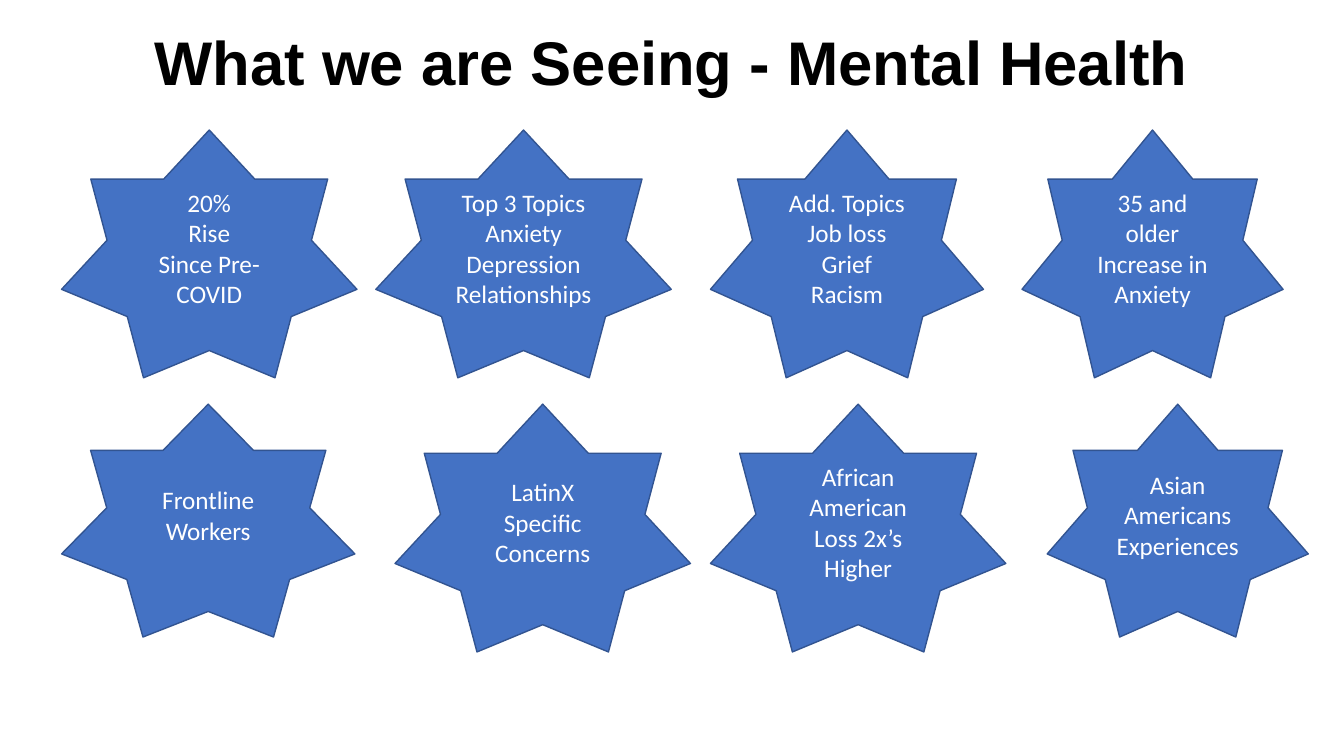
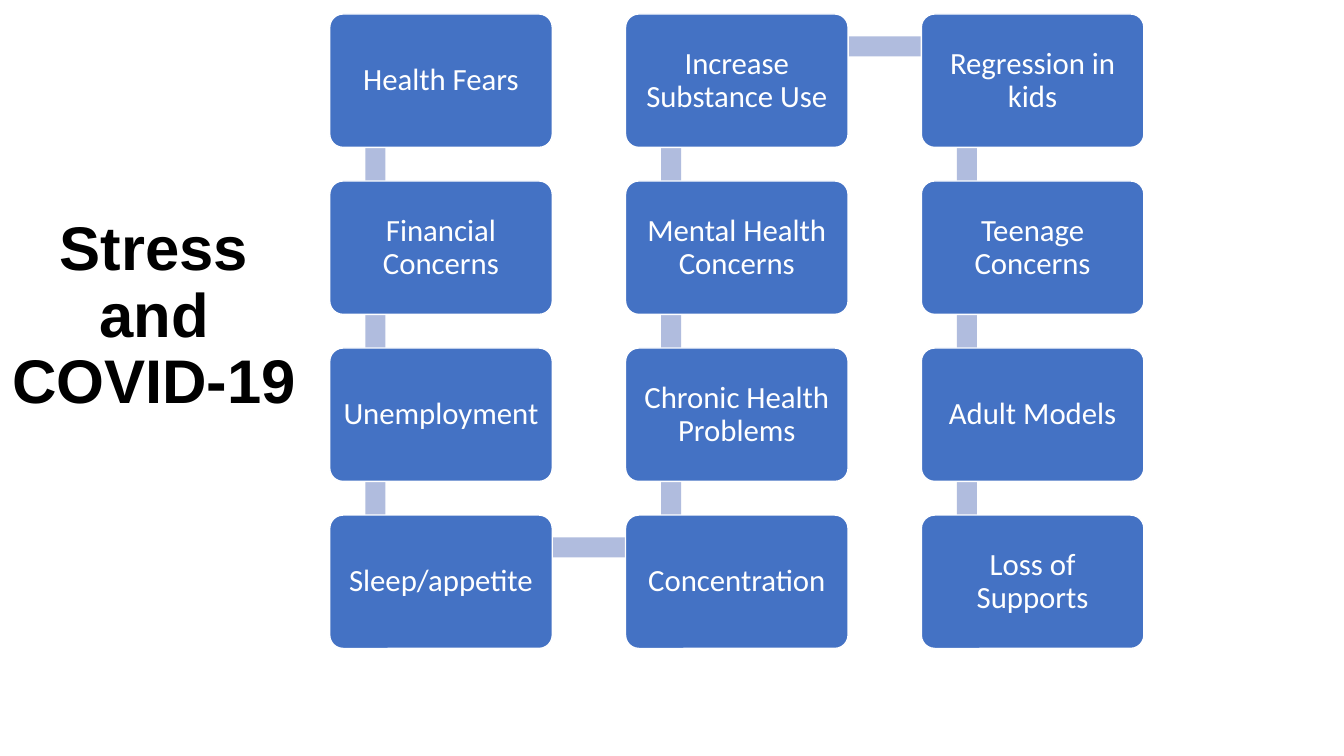
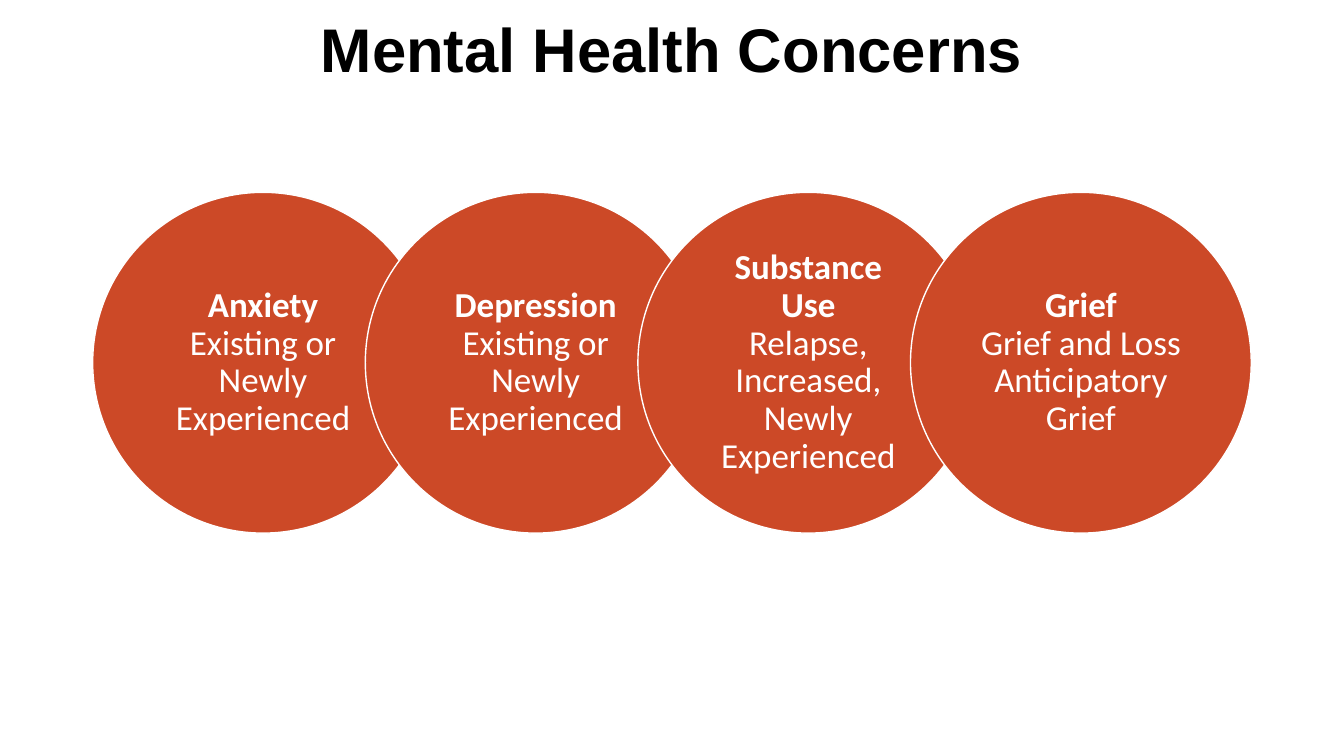
from pptx import Presentation
from pptx.dml.color import RGBColor
from pptx.enum import shapes, text
from pptx.util import Pt

BLACK = RGBColor(0x00, 0x00, 0x00)
WHITE = RGBColor(0xFF, 0xFF, 0xFF)
BLUE = RGBColor(0x44, 0x72, 0xC4)
DARK_BLUE = RGBColor(0x32, 0x54, 0x91)
PALE_BLUE = RGBColor(0xB0, 0xBC, 0xDE)
RUST = RGBColor(0xCC, 0x49, 0x27)

TITLE_FONT = "Arial"
BODY_FONT = "Calibri"
PAGE_WIDTH, PAGE_HEIGHT = 960, 540
TITLE_ONLY = 5

# Left, width, height and lines of each star, by the top of its row
STAR_ROWS = {
    92.9: [
        (44, 211, 177, ["20%", "Rise", "Since Pre-COVID"]),
        (268.5, 211, 177, ["Top 3 Topics", "Anxiety", "Depression", "Relationships"]),
        (507.5, 195, 177, ["Add. Topics", "Job loss", "Grief", "Racism"]),
        (730, 186.5, 177, ["35 and older", "Increase in Anxiety"]),
    ],
    288.7: [
        (44, 209.5, 166.3, ["Frontline Workers"]),
        (282.2, 211, 177, ["LatinX Specific Concerns"]),
        (507.5, 211, 177, ["African American Loss 2x’s Higher"]),
        (748, 186.5, 166.3, ["Asian", "Americans Experiences"]),
    ],
}

STRESSORS = [
    "Health Fears", "Financial Concerns", "Unemployment", "Sleep/appetite",
    "Concentration", "Chronic Health Problems", "Mental Health Concerns",
    "Increase Substance Use",
    "Regression in kids", "Teenage Concerns", "Adult Models", "Loss of Supports",
]
CARD_ROWS = 4
CARD_LEFT, CARD_TOP = 235.5, 10
CARD_WIDTH, CARD_HEIGHT = 159, 95.3
COLUMN_STEP, ROW_STEP = 211.3, 119.3
BAR_THICKNESS = 14.3

CONCERNS = [
    ["Anxiety", "Existing or Newly Experienced"],
    ["Depression", "Existing or Newly Experienced"],
    ["Substance Use", "Relapse, Increased, Newly Experienced"],
    ["Grief", "Grief and Loss", "Anticipatory Grief"],
]
CIRCLE_LEFT, CIRCLE_TOP, CIRCLE_SIZE = 66.2, 137.4, 243.4
CIRCLE_STEP = CIRCLE_SIZE * 0.8


def add_page(deck, title, width, height):
    """Add a slide whose centred title fills a box at the top left corner."""
    page = deck.slides.add_slide(deck.slide_layouts[TITLE_ONLY])
    box = page.shapes.title
    box.left, box.top, box.width, box.height = 0, 0, Pt(width), Pt(height)
    frame = box.text_frame
    frame.text = title
    frame.word_wrap = True
    frame.auto_size = text.MSO_AUTO_SIZE.NONE
    frame.vertical_anchor = text.MSO_ANCHOR.MIDDLE
    para = frame.paragraphs[0]
    para.alignment = text.PP_ALIGN.CENTER
    para.line_spacing = 0.9
    font = para.runs[0].font
    font.name, font.size, font.bold = TITLE_FONT, Pt(44), True
    font.color.rgb = BLACK
    return page


def add_figure(page, kind, left, top, width, height, fill, line=None):
    """Add a flat preset shape, outlined only when a line colour is given."""
    figure = page.shapes.add_shape(kind, Pt(left), Pt(top), Pt(width), Pt(height))
    figure.shadow.inherit = False
    figure.fill.solid()
    figure.fill.fore_color.rgb = fill
    if line is None:
        figure.line.fill.background()
    else:
        figure.line.color.rgb = line
        figure.line.width = Pt(1)
    return figure


def write_lines(figure, lines, size, spacing=1.0, insets=(7.2, 3.6), bold_first=False):
    """Centre the lines in a figure; insets are the side and the top margins."""
    frame = figure.text_frame
    frame.word_wrap = True
    frame.vertical_anchor = text.MSO_ANCHOR.MIDDLE
    frame.margin_left = frame.margin_right = Pt(insets[0])
    frame.margin_top = frame.margin_bottom = Pt(insets[1])
    frame.text = "\n".join(lines)
    for index, para in enumerate(frame.paragraphs):
        para.alignment = text.PP_ALIGN.CENTER
        para.line_spacing = spacing
        for span in para.runs:
            span.font.name, span.font.size = BODY_FONT, Pt(size)
            span.font.color.rgb = WHITE
            span.font.bold = bold_first and index == 0


def card_corner(index):
    """Left and top of a card on the path that runs down, up and down again."""
    column, row = divmod(index, CARD_ROWS)
    if column % 2:
        row = CARD_ROWS - 1 - row
    return CARD_LEFT + column * COLUMN_STEP, CARD_TOP + row * ROW_STEP


def add_bar(page, start, end):
    """Link two neighbouring cards, given by their corners."""
    left, top = min(start, end)
    if start[0] == end[0]:
        place = left + 25.5, top + 23.5, BAR_THICKNESS, ROW_STEP
    else:
        place = left + 32.5, top + 16, COLUMN_STEP, BAR_THICKNESS
    add_figure(page, shapes.MSO_SHAPE.RECTANGLE, *place, PALE_BLUE)


def add_stars(page):
    for top, stars in STAR_ROWS.items():
        for left, width, height, lines in stars:
            star = add_figure(page, shapes.MSO_SHAPE.STAR_7_POINT,
                              left, top, width, height, BLUE, DARK_BLUE)
            write_lines(star, lines, 18)


def add_stress_path(page):
    corners = [card_corner(index) for index in range(len(STRESSORS))]
    for start, end in zip(corners, corners[1:]):
        add_bar(page, start, end)
    for (left, top), stressor in zip(corners, STRESSORS):
        card = add_figure(page, shapes.MSO_SHAPE.ROUNDED_RECTANGLE,
                          left, top, CARD_WIDTH, CARD_HEIGHT, BLUE, WHITE)
        card.adjustments[0] = 0.1
        write_lines(card, [stressor], 22, 0.9, (6, 6))


def add_circles(page):
    for index, lines in enumerate(CONCERNS):
        circle = add_figure(page, shapes.MSO_SHAPE.OVAL,
                            CIRCLE_LEFT + index * CIRCLE_STEP, CIRCLE_TOP,
                            CIRCLE_SIZE, CIRCLE_SIZE, RUST, WHITE)
        write_lines(circle, lines, 25, 0.9, (13, 2.5), bold_first=True)


def main():
    deck = Presentation()
    deck.slide_width, deck.slide_height = Pt(PAGE_WIDTH), Pt(PAGE_HEIGHT)
    add_stars(add_page(deck, "What we are Seeing - Mental Health", PAGE_WIDTH, 93.5))
    add_stress_path(add_page(deck, "Stress and COVID-19", 220.3, 453))
    add_circles(add_page(deck, "Mental Health Concerns", PAGE_WIDTH, 75))
    deck.save("out.pptx")


if __name__ == "__main__":
    main()
